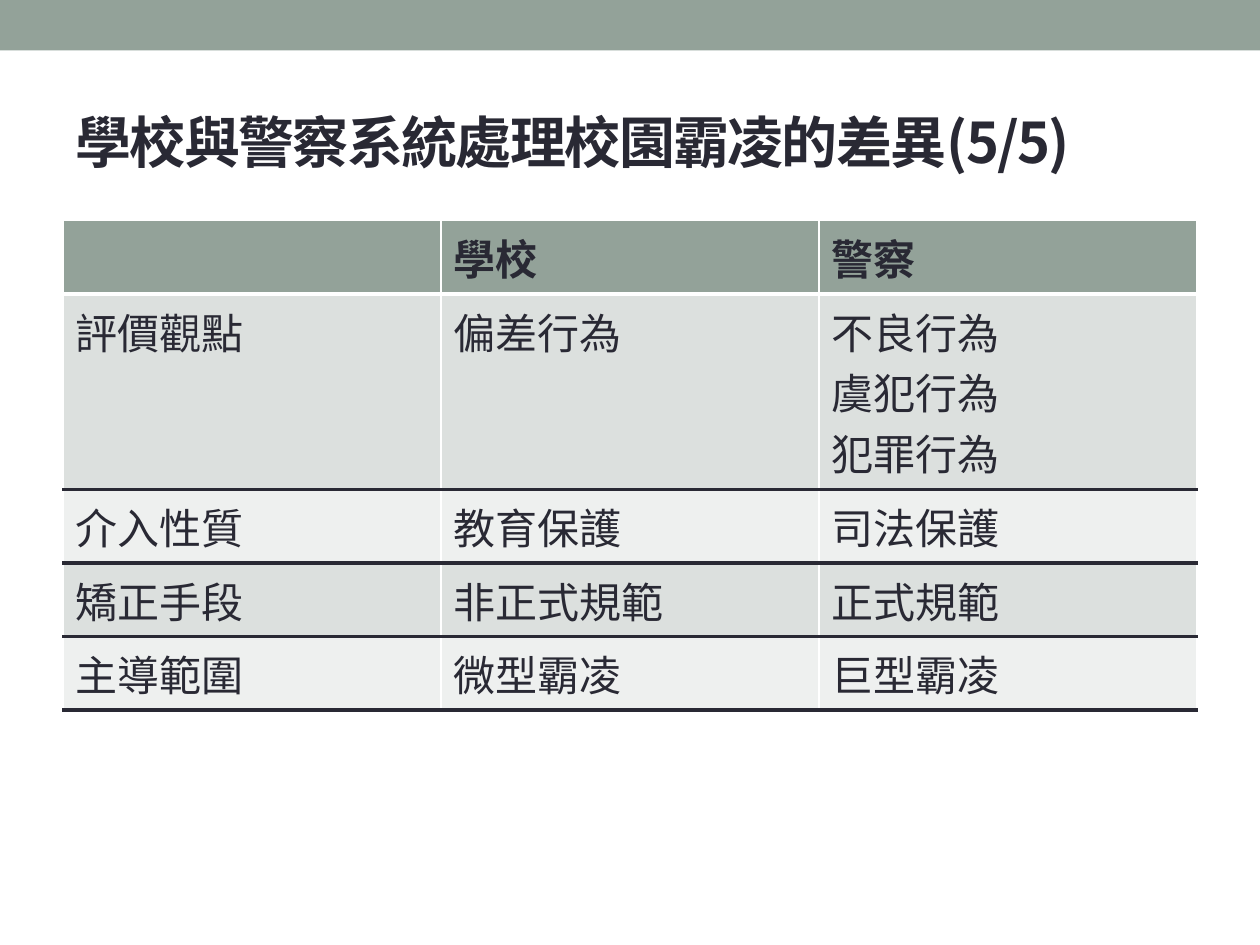
from dataclasses import dataclass

from lxml import etree
from pptx import Presentation
from pptx import util as u
from pptx.dml.color import RGBColor
from pptx.enum import shapes, text
from pptx.oxml import ns

FONT = "Noto Sans CJK SC"
COLORS = {
    "sage": "93A299",
    "ink": "292934",
    "white": "FFFFFF",
    "band_dark": "DCE0DE",
    "band_light": "EEF0EF",
}


@dataclass(frozen=True)
class Edge:
    color: str
    points: float


@dataclass(frozen=True)
class Row:
    entries: tuple[str, str, str]
    height: float
    fill: str
    top: Edge
    bottom: Edge
    bold: bool = False


THIN = Edge("white", 1)
HEADER_RULE = Edge("white", 3)
RULE = Edge("ink", 2.25)

LINE_HEIGHT, CELL_PADDING = 0.48, 0.1
SINGLE = LINE_HEIGHT + CELL_PADDING
TRIPLE = 3 * LINE_HEIGHT + CELL_PADDING

ROWS = (
    Row(("", "學校", "警察"), SINGLE, "sage", THIN, HEADER_RULE, bold=True),
    Row(("評價觀點", "偏差行為", "不良行為\n虞犯行為\n犯罪行為"),
        TRIPLE, "band_dark", HEADER_RULE, RULE),
    Row(("介入性質", "教育保護", "司法保護"), SINGLE, "band_light", RULE, RULE),
    Row(("矯正手段", "非正式規範", "正式規範"), SINGLE, "band_dark", RULE, RULE),
    Row(("主導範圍", "微型霸凌", "巨型霸凌"), SINGLE, "band_light", RULE, RULE),
)


def rgb(name: str) -> RGBColor:
    return RGBColor.from_string(COLORS[name])


def add_run(paragraph, words: str, size: float, bold: bool):
    run = paragraph.add_run()
    run.text = words
    run.font.size = u.Pt(size)
    run.font.bold = bold
    run.font.color.rgb = rgb("ink")
    run.font.name = FONT
    # East Asian characters take their own typeface entry
    etree.SubElement(run.font._element, ns.qn("a:ea"), typeface=FONT)
    return run


def draw_edge(cell, side: str, edge: Edge) -> None:
    line = etree.SubElement(cell._tc.get_or_add_tcPr(), ns.qn(f"a:ln{side}"),
                            w=str(u.Pt(edge.points)))
    fill = etree.SubElement(line, ns.qn("a:solidFill"))
    etree.SubElement(fill, ns.qn("a:srgbClr"), val=COLORS[edge.color])


def fill_cell(cell, entry: str, row: Row) -> None:
    for side, edge in (("L", THIN), ("R", THIN), ("T", row.top), ("B", row.bottom)):
        draw_edge(cell, side, edge)
    cell.fill.solid()
    cell.fill.fore_color.rgb = rgb(row.fill)
    frame = cell.text_frame
    for index, words in enumerate(entry.splitlines()):
        paragraph = frame.add_paragraph() if index else frame.paragraphs[0]
        add_run(paragraph, words, 24, row.bold)


def add_top_band(slide) -> None:
    band = slide.shapes.add_shape(shapes.MSO_SHAPE.RECTANGLE, 0, 0,
                                  u.Inches(10), u.Inches(0.4))
    band.shadow.inherit = False
    band.fill.solid()
    band.fill.fore_color.rgb = rgb("sage")
    band.line.fill.background()


def set_title(slide, words: str) -> None:
    title = slide.shapes.title
    title.left, title.top = u.Inches(0.5), u.Inches(0.58)
    title.width, title.height = u.Inches(9), u.Inches(1.08)
    frame = title.text_frame
    frame.auto_size = text.MSO_AUTO_SIZE.NONE
    frame.vertical_anchor = text.MSO_ANCHOR.MIDDLE
    paragraph = frame.paragraphs[0]
    paragraph.alignment = text.PP_ALIGN.LEFT
    run = add_run(paragraph, words, 32, True)
    run.font._element.set("spc", "-100")


def add_comparison(slide, rows: tuple[Row, ...]) -> None:
    height = sum(row.height for row in rows)
    table = slide.shapes.add_table(len(rows), 3, u.Inches(0.5), u.Inches(1.75),
                                   u.Inches(9), u.Inches(height)).table
    for row, table_row in zip(rows, table.rows):
        table_row.height = u.Inches(row.height)
        for cell, entry in zip(table_row.cells, row.entries):
            fill_cell(cell, entry, row)


def main() -> None:
    deck = Presentation()
    deck.slide_width, deck.slide_height = u.Inches(10), u.Inches(7.5)
    slide = deck.slides.add_slide(deck.slide_layouts[5])  # Title Only
    add_top_band(slide)
    set_title(slide, "學校與警察系統處理校園霸凌的差異(5/5)")
    add_comparison(slide, ROWS)
    deck.save("out.pptx")


if __name__ == "__main__":
    main()
